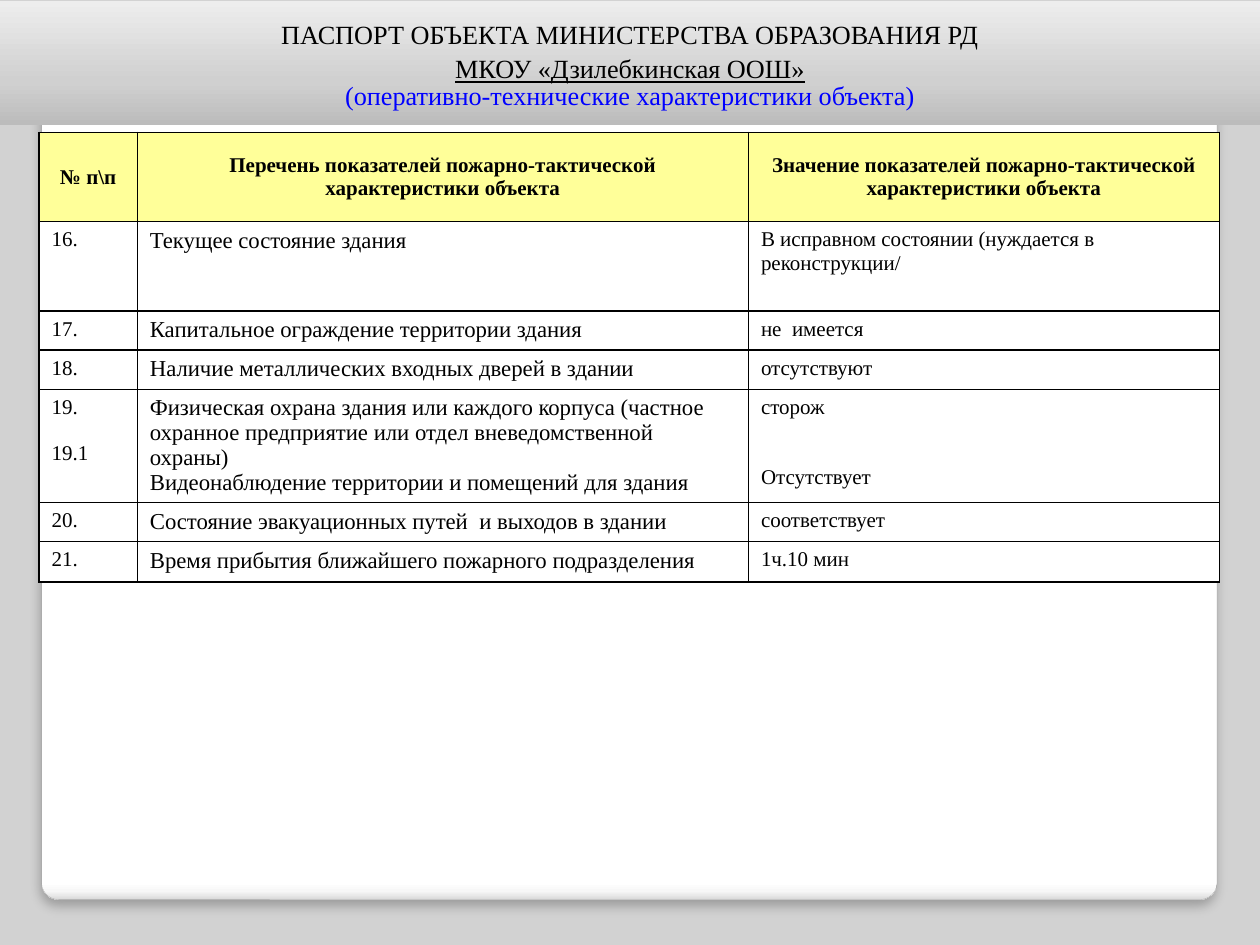
from dataclasses import dataclass

from lxml import etree
from pptx import Presentation
from pptx.dml.color import RGBColor
from pptx.enum.shapes import MSO_SHAPE
from pptx.enum.text import MSO_ANCHOR, PP_ALIGN
from pptx.oxml import parse_xml
from pptx.oxml.ns import nsdecls, qn
from pptx.util import Inches, Pt

CENTER, LEFT = PP_ALIGN.CENTER, PP_ALIGN.LEFT
MIDDLE, TOP = MSO_ANCHOR.MIDDLE, MSO_ANCHOR.TOP
RECTANGLE, ROUNDED = MSO_SHAPE.RECTANGLE, MSO_SHAPE.ROUNDED_RECTANGLE


@dataclass(frozen=True)
class Theme:
    font: str = "Times New Roman"
    ink: str = "000000"
    accent: str = "0000FF"
    page: str = "D2D2D2"
    header: str = "FFFF99"
    cell: str = "FFFFFF"
    edge: str = "A4A4A4"
    title_size: int = 15
    label_size: int = 13
    value_size: int = 12
    panel_stops: tuple = ((0, "FFFFFF"), (98, "FFFFFF"), (99, "F7F7F7"), (100, "DADADA"))
    banner_stops: tuple = ((0, "BCBCBC"), (35, "D0D0D0"), (100, "EDEDED"))


THEME = Theme()

# Content: each title line has its own format
TITLE = [
    ("ПАСПОРТ ОБЪЕКТА МИНИСТЕРСТВА ОБРАЗОВАНИЯ РД", {"spacing": 1.1}),
    ("МКОУ «Дзилебкинская ООШ»", {"spacing": 1.1, "underline": True}),
    ("(оперативно-технические характеристики объекта)",
     {"spacing": 0.85, "color": THEME.accent}),
]
HEADERS = [
    "№ п\\п",
    "Перечень показателей пожарно-тактической характеристики объекта",
    "Значение показателей пожарно-тактической характеристики объекта",
]
# Each cell is a list of paragraphs
ROWS = [
    (["16."], ["Текущее состояние здания"],
     ["В исправном состоянии (нуждается в реконструкции/"]),
    (["17."], ["Капитальное ограждение территории здания"], ["не  имеется"]),
    (["18."], ["Наличие металлических входных дверей в здании"], ["отсутствуют"]),
    (["19.", "19.1"],
     ["Физическая охрана здания или каждого корпуса (частное охранное предприятие "
      "или отдел вневедомственной охраны)",
      "Видеонаблюдение территории и помещений для здания"],
     ["сторож", "Отсутствует"]),
    (["20."], ["Состояние эвакуационных путей  и выходов в здании"], ["соответствует"]),
    (["21."], ["Время прибытия ближайшего пожарного подразделения"], ["1ч.10 мин"]),
]
COLUMN_WIDTHS = [0.78, 4.85, 3.74]
ROW_HEIGHTS = [0.71, 0.71, 0.31, 0.31, 0.9, 0.31, 0.32]
COLUMN_SIZES = [THEME.value_size, THEME.label_size, THEME.value_size]
COLUMN_GAPS = [13.3, 0, 26.6]  # points before a second paragraph


def write(para, text, size, color=THEME.ink, bold=False, underline=False,
          align=LEFT, spacing=1.0, before=0):
    para.alignment = align
    para.line_spacing = spacing
    para.space_before = Pt(before)
    span = para.add_run()
    span.text = text
    font = span.font
    font.name, font.size = THEME.font, Pt(size)
    font.bold, font.underline = bold, underline
    font.color.rgb = RGBColor.from_string(color)


def next_para(frame, index):
    return frame.add_paragraph() if index else frame.paragraphs[0]


def add_panel(page, kind, left, top, width, height, stops, angle):
    """Add a shape filled with a gradient of several stops."""
    box = page.shapes.add_shape(kind, *map(Inches, (left, top, width, height)))
    box.shadow.inherit = False
    box.line.fill.background()
    marks = "".join(
        f'<a:gs pos="{place * 1000}"><a:srgbClr val="{color}"/></a:gs>'
        for place, color in stops)
    gradient = parse_xml(
        f'<a:gradFill {nsdecls("a")} rotWithShape="1"><a:gsLst>{marks}</a:gsLst>'
        f'<a:lin ang="{angle * 60000}" scaled="0"/></a:gradFill>')
    box.element.spPr.find(qn("a:prstGeom")).addnext(gradient)
    return box


def add_shadow(box):
    effects = box.element.spPr.find(qn("a:effectLst"))
    effects.append(parse_xml(
        f'<a:outerShdw {nsdecls("a")} blurRad="{Pt(6)}" dist="{Pt(4)}" dir="5400000">'
        '<a:srgbClr val="000000"><a:alpha val="25000"/></a:srgbClr></a:outerShdw>'))


def add_borders(cell):
    properties = cell._tc.get_or_add_tcPr()
    for index, side in enumerate(("lnL", "lnR", "lnT", "lnB")):
        line = etree.Element(qn(f"a:{side}"), w=str(Pt(1)))
        fill = etree.SubElement(line, qn("a:solidFill"))
        etree.SubElement(fill, qn("a:srgbClr"), val=THEME.ink)
        properties.insert(index, line)


def fill_cell(cell, paragraphs, fill, anchor, gap=0, **style):
    cell.fill.solid()
    cell.fill.fore_color.rgb = RGBColor.from_string(fill)
    cell.vertical_anchor = anchor
    cell.margin_left = cell.margin_right = Inches(0.1)
    cell.margin_top = cell.margin_bottom = Inches(0.05)
    for index, text in enumerate(paragraphs):
        write(next_para(cell.text_frame, index), text,
              before=gap if index else 0, **style)
    add_borders(cell)


def add_passport_table(page):
    table = page.shapes.add_table(
        len(ROW_HEIGHTS), len(COLUMN_WIDTHS), Inches(0.31), Inches(1.05),
        Inches(sum(COLUMN_WIDTHS)), Inches(sum(ROW_HEIGHTS))).table
    for column, width in zip(table.columns, COLUMN_WIDTHS):
        column.width = Inches(width)
    for row, height in zip(table.rows, ROW_HEIGHTS):
        row.height = Inches(height)
    for column, text in enumerate(HEADERS):
        fill_cell(table.cell(0, column), [text], THEME.header, MIDDLE,
                  size=THEME.value_size, bold=True, align=CENTER)
    for row, cells in enumerate(ROWS, 1):
        for column, paragraphs in enumerate(cells):
            fill_cell(table.cell(row, column), paragraphs, THEME.cell, TOP,
                      gap=COLUMN_GAPS[column], size=COLUMN_SIZES[column])


def main():
    deck = Presentation()
    deck.slide_width, deck.slide_height = Inches(10), Inches(7.5)
    page = deck.slides.add_slide(deck.slide_layouts[6])
    page.background.fill.solid()
    page.background.fill.fore_color.rgb = RGBColor.from_string(THEME.page)

    # White panel with soft shadow
    panel = add_panel(page, ROUNDED, 0.33, 0.36, 9.33, 6.78, THEME.panel_stops, 90)
    panel.adjustments[0] = 0.02
    panel.line.color.rgb = RGBColor.from_string(THEME.edge)
    panel.line.width = Pt(0.16)
    add_shadow(panel)

    add_passport_table(page)

    # Title banner
    banner = add_panel(page, RECTANGLE, 0, 0.01, 10, 0.98, THEME.banner_stops, 270)
    frame = banner.text_frame
    frame.word_wrap = True
    frame.vertical_anchor = MIDDLE
    for index, (text, style) in enumerate(TITLE):
        write(next_para(frame, index), text, size=THEME.title_size,
              align=CENTER, **style)

    deck.save("out.pptx")


if __name__ == "__main__":
    main()
